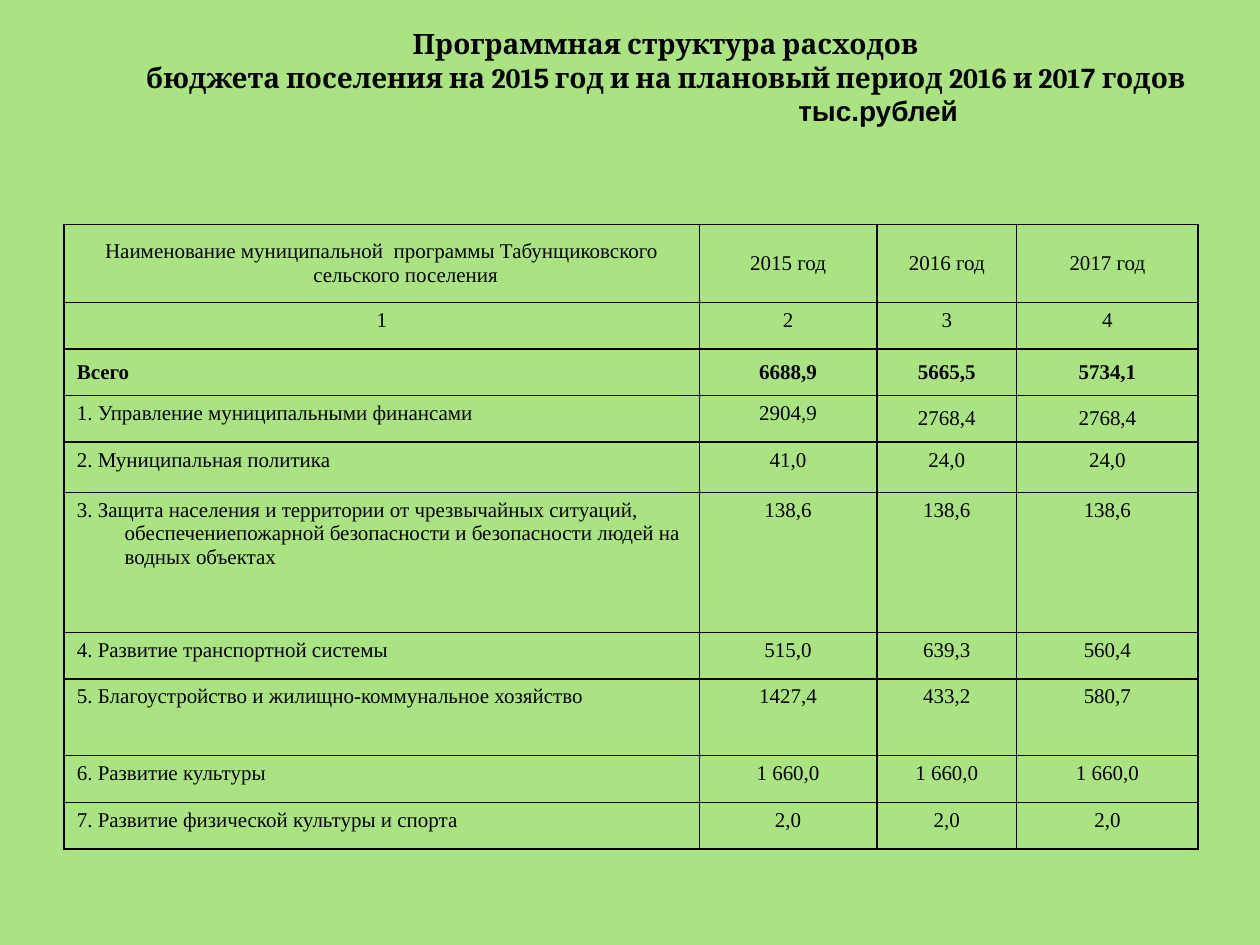
from lxml import etree
from pptx import Presentation
from pptx.dml.color import RGBColor
from pptx.enum.text import MSO_ANCHOR, MSO_AUTO_SIZE, PP_ALIGN
from pptx.oxml.ns import qn
from pptx.util import Inches, Pt

CENTER, LEFT = PP_ALIGN.CENTER, PP_ALIGN.LEFT
TOP, MIDDLE = MSO_ANCHOR.TOP, MSO_ANCHOR.MIDDLE
COLORS = {"background": "AAE482", "text": "000000", "border": "000000"}


def add_run(p, text, font="Times New Roman", size=12, bold=False):
    r = p.add_run()
    r.text = text
    r.font.name = font
    r.font.size = Pt(size)
    r.font.bold = bold
    r.font.color.rgb = RGBColor.from_string(COLORS["text"])


def add_borders(cell):
    tcPr = cell._tc.get_or_add_tcPr()
    for i, side in enumerate(("lnL", "lnR", "lnT", "lnB")):
        ln = etree.Element(qn(f"a:{side}"), w=str(Pt(1)))
        fill = etree.SubElement(ln, qn("a:solidFill"))
        etree.SubElement(fill, qn("a:srgbClr"), val=COLORS["border"])
        tcPr.insert(i, ln)


prs = Presentation()
prs.slide_width, prs.slide_height = Inches(10), Inches(7.5)
s = prs.slides.add_slide(prs.slide_layouts[5])
s.background.fill.solid()
s.background.fill.fore_color.rgb = RGBColor.from_string(COLORS["background"])

# Title, with the unit of measure set off to the right
title = s.shapes.title
title.left, title.top = Inches(1.06), Inches(0.28)
title.width, title.height = Inches(8.45), Inches(0.79)
tf = title.text_frame
tf.word_wrap = True
tf.auto_size = MSO_AUTO_SIZE.NONE
tf.vertical_anchor = MIDDLE
tf.margin_top, tf.margin_bottom = 0, Inches(0.13)

TITLE_LINES = [
    [("Программная структура расходов", "Cambria")],
    [("бюджета поселения на 201", "Cambria"), ("5", "Arial"),
     (" год и на плановый период 201", "Cambria"), ("6", "Arial"),
     (" и 201", "Cambria"), ("7", "Arial"), (" годов", "Cambria")],
    [("тыс.рублей", "Arial")],
]
for i, line in enumerate(TITLE_LINES):
    p = tf.paragraphs[0] if i == 0 else tf.add_paragraph()
    p.alignment = CENTER
    p.space_before = Pt(0)
    for text, font in line:
        add_run(p, text, font=font, size=16, bold=True)
p._p.get_or_add_pPr().set("marL", str(Inches(3.37)))

# Programme spending table
ROWS = [
    ("Наименование муниципальной  программы Табунщиковского сельского поселения",
     "2015 год", "2016 год", "2017 год"),
    ("1", "2", "3", "4"),
    ("Всего", "6688,9", "5665,5", "5734,1"),
    ("1. Управление муниципальными финансами", "2904,9", "2768,4", "2768,4"),
    ("2. Муниципальная политика", "41,0", "24,0", "24,0"),
    ("3. Защита населения и территории от чрезвычайных ситуаций, "
     "обеспечениепожарной безопасности и безопасности людей на водных объектах",
     "138,6", "138,6", "138,6"),
    ("4. Развитие транспортной системы", "515,0", "639,3", "560,4"),
    ("5. Благоустройство и жилищно-коммунальное хозяйство",
     "1427,4", "433,2", "580,7"),
    ("6. Развитие культуры", "1 660,0", "1 660,0", "1 660,0"),
    ("7. Развитие физической культуры и спорта", "2,0", "2,0", "2,0"),
]
COL_WIDTHS = [5.04, 1.41, 1.11, 1.44]
ROW_HEIGHTS = [0.62, 0.37, 0.37, 0.37, 0.4, 1.11, 0.37, 0.61, 0.37, 0.37]
HEADER_ROWS, TOTAL_ROW = 2, 2
MIDDLE_CELLS = {(row, col) for row in (0, TOTAL_ROW) for col in range(4)}
MIDDLE_CELLS |= {(3, 2), (3, 3)}

table = s.shapes.add_table(len(ROWS), len(COL_WIDTHS), Inches(0.51), Inches(1.78),
                           Inches(9), Inches(4.95)).table
table.first_row = table.horz_banding = False
for col, width in zip(table.columns, COL_WIDTHS):
    col.width = Inches(width)
for row, height in zip(table.rows, ROW_HEIGHTS):
    row.height = Inches(height)

for i, values in enumerate(ROWS):
    for j, text in enumerate(values):
        cell = table.cell(i, j)
        cell.fill.background()
        add_borders(cell)
        cell.vertical_anchor = MIDDLE if (i, j) in MIDDLE_CELLS else TOP
        p = cell.text_frame.paragraphs[0]
        p.alignment = LEFT if j == 0 and i >= HEADER_ROWS else CENTER
        pPr = p._p.get_or_add_pPr()
        pPr.set("marL", str(Inches(0.38)))
        pPr.set("indent", str(Inches(-0.38)))
        add_run(p, text, bold=i == TOTAL_ROW)

prs.save("out.pptx")
